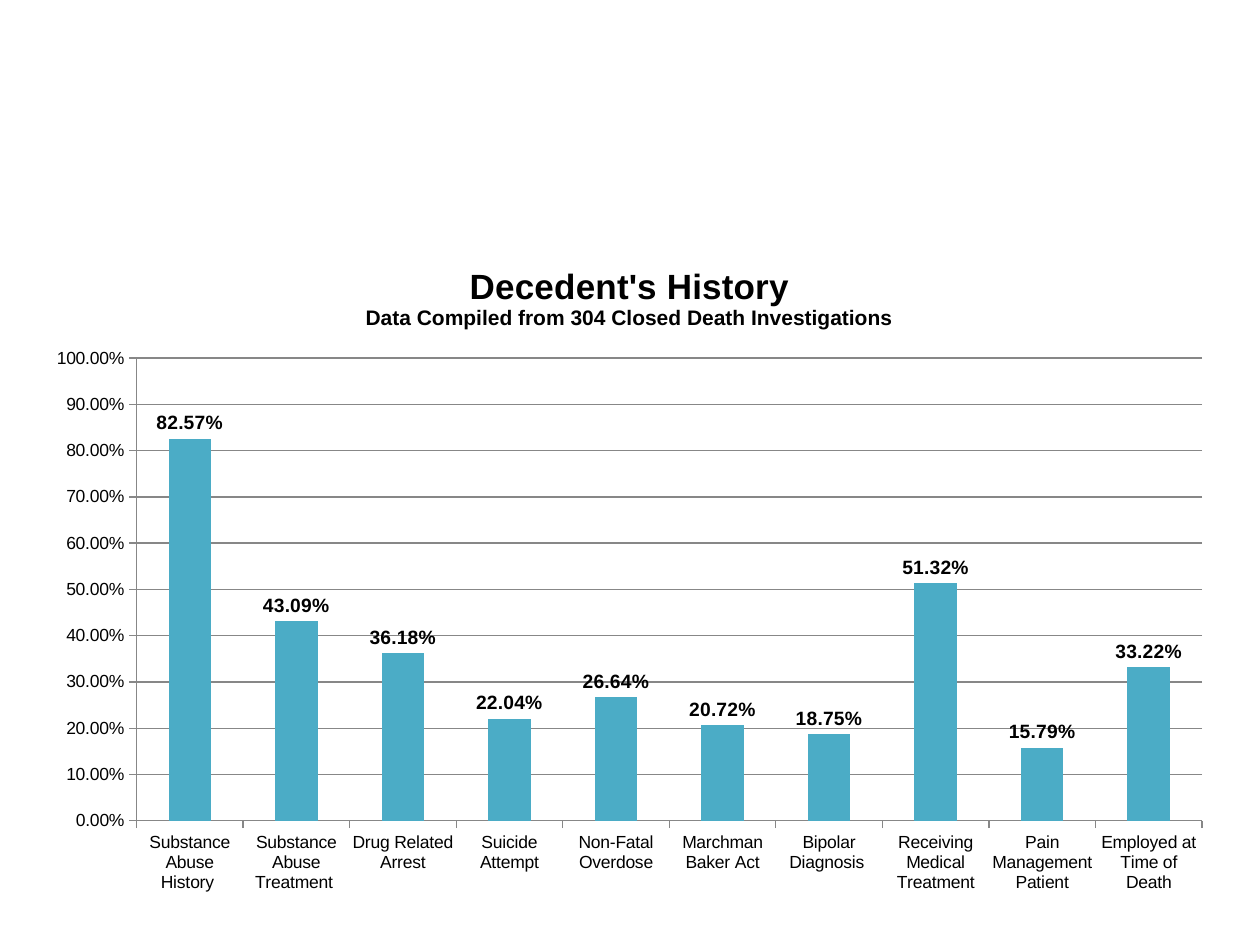
from lxml import etree
from pptx import Presentation
from pptx.chart.data import CategoryChartData
from pptx.dml.color import RGBColor
from pptx.enum.chart import XL_CHART_TYPE, XL_LABEL_POSITION, XL_TICK_MARK
from pptx.oxml.ns import qn
from pptx.util import Inches, Pt

BLACK = RGBColor(0x00, 0x00, 0x00)
GRAY = RGBColor(0x87, 0x87, 0x87)
TEAL = RGBColor(0x4B, 0xAC, 0xC6)
PERCENT = "0.00%"

rates = {
    "Substance Abuse History ": 0.8257,
    "Substance Abuse Treatment ": 0.4309,
    "Drug Related Arrest": 0.3618,
    "Suicide Attempt": 0.2204,
    "Non-Fatal Overdose": 0.2664,
    "Marchman Baker Act": 0.2072,
    "Bipolar Diagnosis ": 0.1875,
    "Receiving Medical Treatment": 0.5132,
    "Pain Management Patient": 0.1579,
    "Employed at Time of Death": 0.3322,
}


def style(font, size, bold=False):
    font.name = "Arial"
    font.size = Pt(size)
    font.bold = bold
    font.color.rgb = BLACK


prs = Presentation()
prs.slide_width, prs.slide_height = Inches(10), Inches(7.5)
slide = prs.slides.add_slide(prs.slide_layouts[6])

data = CategoryChartData(number_format=PERCENT)
data.categories = rates.keys()
data.add_series("Series 1", rates.values())
chart = slide.shapes.add_chart(
    XL_CHART_TYPE.COLUMN_CLUSTERED,
    Inches(0.26), Inches(1.92), Inches(9.47), Inches(5.27), data,
).chart
style(chart.font, 10)
chart.has_legend = False

# Title
frame = chart.chart_title.text_frame
frame.text = "Decedent's History\nData Compiled from 304 Closed Death Investigations"
for para, size in zip(frame.paragraphs, (20, 12)):
    style(para.font, size, True)
    style(para.runs[0].font, size, True)
chart.chart_title.include_in_layout = False

# Axes
scale = chart.value_axis
scale.minimum_scale, scale.maximum_scale, scale.major_unit = 0, 1, 0.1
scale.tick_labels.number_format = PERCENT
scale.tick_labels.number_format_is_linked = False
scale.has_major_gridlines = True
for axis in (chart.category_axis, scale):
    axis.major_tick_mark = XL_TICK_MARK.OUTSIDE
    axis.minor_tick_mark = XL_TICK_MARK.NONE
    style(axis.tick_labels.font, 10)
for line in (chart.category_axis.format.line, scale.format.line,
             scale.major_gridlines.format.line):
    line.color.rgb = GRAY
    line.width = Pt(0.75)

# Columns and their labels
plot = chart.plots[0]
plot.gap_width = 150
plot.vary_by_categories = False
bars = plot.series[0]
bars.format.fill.solid()
bars.format.fill.fore_color.rgb = TEAL
labels = bars.data_labels
labels.show_value = True
labels.position = XL_LABEL_POSITION.OUTSIDE_END
labels.number_format = PERCENT
labels.number_format_is_linked = False
style(labels.font, 11, True)

# Fixed inner plot area, as fractions of the chart
area = plot._element.getparent()
for old in area.findall(qn("c:layout")):
    area.remove(old)
layout = etree.Element(qn("c:layout"))
manual = etree.SubElement(layout, qn("c:manualLayout"))
for tag, value in (("layoutTarget", "inner"), ("xMode", "edge"), ("yMode", "edge"),
                   ("x", "0.087"), ("y", "0.175"), ("w", "0.893"), ("h", "0.697")):
    etree.SubElement(manual, qn("c:" + tag)).set("val", value)
area.insert(0, layout)

prs.save("out.pptx")
